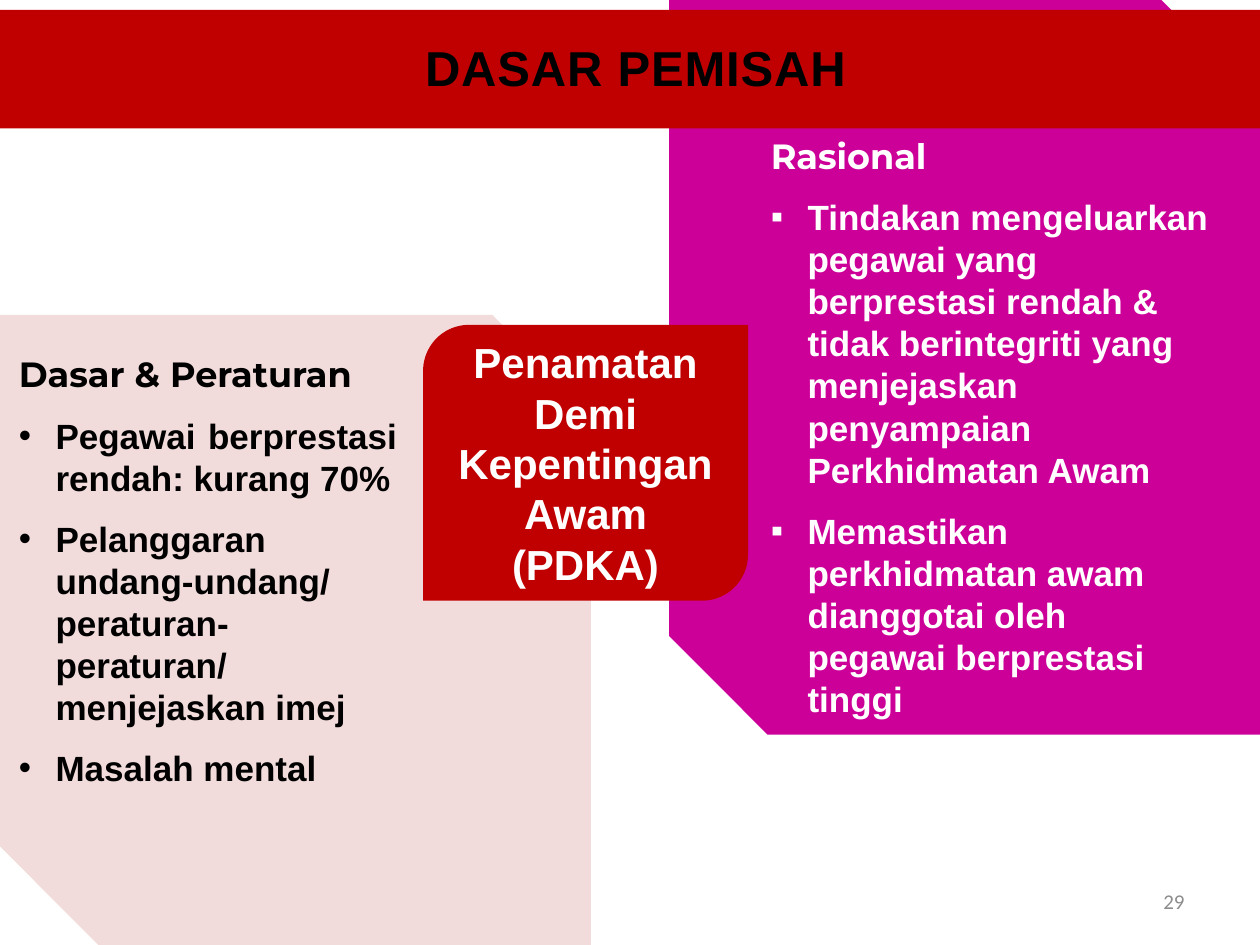
from lxml import etree
from pptx import Presentation
from pptx import util as u
from pptx.dml.color import RGBColor
from pptx.enum import shapes, text
from pptx.oxml.ns import qn

HUES = {"red": "C00000", "rose": "F2DCDB", "pink": "CC0099",
        "white": "FFFFFF", "black": "000000", "gray": "8C8C8C"}
ALIGN = text.PP_ALIGN
FORM = shapes.MSO_SHAPE


def write(para, words, size=20, font="Arial", hue="black", bold=True,
          align=ALIGN.LEFT, before=0, bullet=None, track=None):
    """Put formatted text into one paragraph."""
    run = para.add_run()
    run.text = words
    face = run.font
    face.size, face.name, face.bold = u.Pt(size), font, bold
    face.color.rgb = RGBColor.from_string(HUES[hue])
    para.alignment = align
    para.space_before = u.Pt(before)
    if track:
        run._r.get_or_add_rPr().set("spc", str(int(track * 100)))
    if bullet:
        props = para._p.get_or_add_pPr()
        dent = u.Cm(0.74)
        props.set("marL", str(dent))
        props.set("indent", str(-dent))
        etree.SubElement(props, qn("a:buFont")).set("typeface", "Arial")
        etree.SubElement(props, qn("a:buChar")).set("char", bullet)


class Deck:
    def __init__(self, wide, high):
        self.prs = Presentation()
        self.prs.slide_width, self.prs.slide_height = u.Cm(wide), u.Cm(high)
        self.slide = self.prs.slides.add_slide(self.prs.slide_layouts[5])

    def shape(self, form, place, hue):
        item = self.slide.shapes.add_shape(form, *map(u.Cm, place))
        item.shadow.inherit = False
        item.fill.solid()
        item.fill.fore_color.rgb = RGBColor.from_string(HUES[hue])
        item.line.fill.background()
        return item

    def label(self, item, words, **style):
        frame = item.text_frame
        frame.word_wrap = True
        frame.vertical_anchor = text.MSO_ANCHOR.MIDDLE
        write(frame.paragraphs[0], words, **style)

    def box(self, place):
        return self.slide.shapes.add_textbox(*map(u.Cm, place))

    def points(self, place, head, items, hue, mark, align):
        frame = self.box(place).text_frame
        frame.word_wrap = True
        write(frame.paragraphs[0], head, font="Montserrat", hue=hue)
        for item in items:
            write(frame.add_paragraph(), item, hue=hue, align=align,
                  before=11, bullet=mark)

    def title(self, place, words, **style):
        item = self.slide.shapes.title
        item.left, item.top, item.width, item.height = map(u.Cm, place)
        item.text_frame.auto_size = text.MSO_AUTO_SIZE.NONE
        self.label(item, words, **style)
        # Bring the title in front of its bar
        self.slide.shapes._spTree.append(item._element)


def main():
    deck = Deck(25.4, 19.05)

    # Back panels
    deck.shape(FORM.SNIP_2_DIAG_RECTANGLE, (0, 6.35, 11.91, 12.7), "rose")
    deck.shape(FORM.SNIP_2_DIAG_RECTANGLE, (13.49, 0, 11.91, 14.81), "pink")

    # Page number
    deck.label(deck.box((18.21, 17.65, 5.92, 1.02)), "29", size=12,
               font="Calibri", hue="gray", bold=False, align=ALIGN.RIGHT)

    # Rationale
    deck.points((15.29, 2.59, 9.42, 10.11), "Rasional", [
        "Tindakan mengeluarkan pegawai yang berprestasi rendah & tidak "
        "berintegriti yang menjejaskan penyampaian Perkhidmatan Awam",
        "Memastikan perkhidmatan awam dianggotai oleh pegawai "
        "berprestasi tinggi",
    ], "white", "▪", ALIGN.LEFT)

    # Centre topic
    core = deck.shape(FORM.ROUND_2_DIAG_RECTANGLE,
                      (8.53, 6.55, 6.55, 5.56), "red")
    deck.label(core, "Penamatan Demi Kepentingan Awam (PDKA)", size=24,
               hue="white", align=ALIGN.CENTER)

    # Policy and rules
    deck.points((0.13, 6.99, 8.13, 10.03), "Dasar & Peraturan", [
        "Pegawai berprestasi rendah: kurang 70%",
        "Pelanggaran undang-undang/ peraturan-peraturan/ menjejaskan imej",
        "Masalah mental",
    ], "black", "•", ALIGN.JUSTIFY)

    # Title bar
    deck.shape(FORM.RECTANGLE, (0, 0.2, 25.4, 2.39), "red")
    deck.title((1.7, 0.63, 22.23, 1.45), "DASAR PEMISAH", size=28,
               align=ALIGN.CENTER, track=0.5)

    deck.prs.save("out.pptx")


if __name__ == "__main__":
    main()
